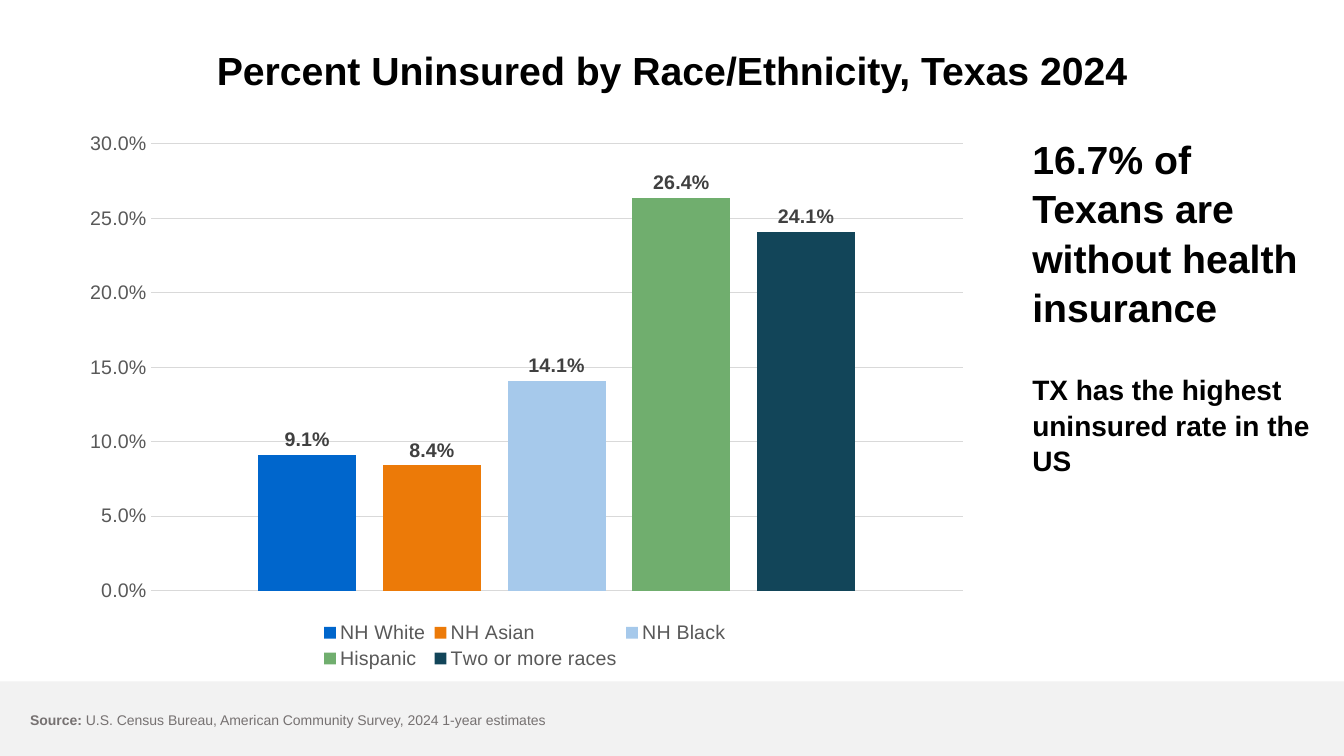
from dataclasses import dataclass

from lxml.etree import SubElement
from pptx import Presentation
from pptx.chart.data import CategoryChartData
from pptx.dml.color import RGBColor
from pptx.enum.chart import XL_CHART_TYPE, XL_LABEL_POSITION, XL_LEGEND_POSITION, XL_TICK_MARK
from pptx.enum.shapes import MSO_SHAPE
from pptx.enum.text import MSO_ANCHOR, PP_ALIGN
from pptx.oxml.ns import qn
from pptx.util import Inches, Pt

FONT = "Arial"
BLACK = RGBColor(0x00, 0x00, 0x00)
AXIS_GRAY = RGBColor(0x59, 0x59, 0x59)
LABEL_GRAY = RGBColor(0x40, 0x40, 0x40)
GRID_GRAY = RGBColor(0xD9, 0xD9, 0xD9)
SOURCE_GRAY = RGBColor(0x76, 0x71, 0x71)
BAND_GRAY = RGBColor(0xF2, 0xF2, 0xF2)
PERCENT = "0.0%"


@dataclass
class Group:
    name: str
    rate: float
    color: RGBColor


@dataclass
class Span:
    text: str
    size: int
    color: RGBColor = BLACK
    bold: bool = True


@dataclass
class Para:
    spans: list[Span]
    format: dict


GROUPS = [
    Group("NH White", 0.091, RGBColor(0x00, 0x66, 0xCC)),
    Group("NH Asian", 0.084, RGBColor(0xEC, 0x7A, 0x08)),
    Group("NH Black", 0.141, RGBColor(0xA6, 0xC9, 0xEB)),
    Group("Hispanic", 0.264, RGBColor(0x70, 0xAE, 0x6E)),
    Group("Two or more races", 0.241, RGBColor(0x12, 0x45, 0x59)),
]
TITLE = [Para([Span("Percent Uninsured by Race/Ethnicity, Texas 2024", 28)],
              {"alignment": PP_ALIGN.CENTER, "line_spacing": 0.9})]
FINDINGS = [
    Para([Span("16.7% of Texans are without health insurance", 28)], {"line_spacing": 1.05}),
    Para([Span("TX has the highest uninsured rate in the US", 20)],
         {"line_spacing": 1.05, "space_before": Pt(29)}),
]
SOURCE = [Para([
    Span("Source: ", 10, SOURCE_GRAY),
    Span("U.S. Census Bureau, American Community Survey, 2024 1-year estimates",
         10, SOURCE_GRAY, False),
], {"line_spacing": 0.9})]


def set_font(font, size: int, color: RGBColor, bold: bool = False) -> None:
    for name, value in {"name": FONT, "size": Pt(size), "bold": bold}.items():
        setattr(font, name, value)
    font.color.rgb = color


def write_text(box, paras: list[Para], anchor=MSO_ANCHOR.TOP) -> None:
    frame = box.text_frame
    frame.word_wrap = True
    frame.vertical_anchor = anchor
    for index, para in enumerate(paras):
        paragraph = frame.add_paragraph() if index else frame.paragraphs[0]
        for name, value in para.format.items():
            setattr(paragraph, name, value)
        for span in para.spans:
            run = paragraph.add_run()
            run.text = span.text
            set_font(run.font, span.size, span.color, span.bold)


def place_part(part, index: int, fractions: dict[str, float], inner: bool = False) -> None:
    """Fix the place of a chart part, as fractions of the chart."""
    for old in part.findall(qn("c:layout")):
        part.remove(old)
    layout = SubElement(part, qn("c:layout"))
    part.insert(index, layout)
    manual = SubElement(layout, qn("c:manualLayout"))
    settings = {"layoutTarget": "inner"} if inner else {}
    settings.update({"xMode": "edge", "yMode": "edge"})
    settings.update({name: str(value) for name, value in fractions.items()})
    for name, value in settings.items():
        SubElement(manual, qn(f"c:{name}")).set("val", value)


def add_rate_chart(page, groups: list[Group]) -> None:
    data = CategoryChartData(number_format=PERCENT)
    data.categories = ["1"]
    for group in groups:
        data.add_series(group.name, [group.rate])
    chart = page.shapes.add_chart(XL_CHART_TYPE.COLUMN_CLUSTERED, Inches(0.68), Inches(1.21),
                                  Inches(9.05), Inches(5.47), data).chart
    set_font(chart.font, 10, BLACK)
    chart.has_title = False

    # Axes
    chart.category_axis.visible = False
    axis = chart.value_axis
    for name, value in {"minimum_scale": 0, "maximum_scale": 0.3, "major_unit": 0.05,
                        "major_tick_mark": XL_TICK_MARK.NONE,
                        "minor_tick_mark": XL_TICK_MARK.NONE}.items():
        setattr(axis, name, value)
    axis.format.line.fill.background()
    axis.major_gridlines.format.line.color.rgb = GRID_GRAY
    axis.major_gridlines.format.line.width = Pt(0.75)
    axis.tick_labels.number_format = PERCENT
    axis.tick_labels.number_format_is_linked = False
    set_font(axis.tick_labels.font, 14, AXIS_GRAY)

    # Columns
    plot = chart.plots[0]
    for name, value in {"gap_width": 219, "overlap": -27, "vary_by_categories": False}.items():
        setattr(plot, name, value)
    for series, group in zip(plot.series, groups):
        series.format.fill.solid()
        series.format.fill.fore_color.rgb = group.color
        labels = series.data_labels
        for name, value in {"show_value": True, "number_format": PERCENT,
                            "number_format_is_linked": False,
                            "position": XL_LABEL_POSITION.OUTSIDE_END}.items():
            setattr(labels, name, value)
        set_font(labels.font, 14, LABEL_GRAY, True)

    # Legend and plot area
    chart.has_legend = True
    legend = chart.legend
    legend.position = XL_LEGEND_POSITION.BOTTOM
    legend.include_in_layout = False
    set_font(legend.font, 14, AXIS_GRAY)
    legend_part = chart.element.find(".//" + qn("c:legend"))
    place_part(legend_part, 1, {"x": 0.27, "y": 0.9, "w": 0.46, "h": 0.1})
    plot_area = chart.element.find(".//" + qn("c:plotArea"))
    place_part(plot_area, 0, {"x": 0.09, "y": 0.04, "w": 0.89, "h": 0.81}, inner=True)


def main() -> None:
    deck = Presentation()
    deck.slide_width, deck.slide_height = Inches(13.33), Inches(7.5)
    page = deck.slides.add_slide(deck.slide_layouts[5])

    # Footer band
    band = page.shapes.add_shape(MSO_SHAPE.RECTANGLE, 0, Inches(6.76), Inches(13.33), Inches(0.74))
    band.shadow.inherit = False
    band.fill.solid()
    band.fill.fore_color.rgb = BAND_GRAY
    band.line.fill.background()

    # Title
    title = page.shapes.title
    for name, value in {"left": 0, "top": 0.14, "width": 13.33, "height": 1.16}.items():
        setattr(title, name, Inches(value))
    write_text(title, TITLE, MSO_ANCHOR.MIDDLE)

    # Chart, findings and source
    add_rate_chart(page, GROUPS)
    findings = page.shapes.add_textbox(Inches(10.14), Inches(1.27), Inches(3.03), Inches(3.8))
    write_text(findings, FINDINGS)
    source = page.shapes.add_textbox(Inches(0.2), Inches(6.95), Inches(10.35), Inches(0.4))
    write_text(source, SOURCE, MSO_ANCHOR.MIDDLE)

    deck.save("out.pptx")


if __name__ == "__main__":
    main()
